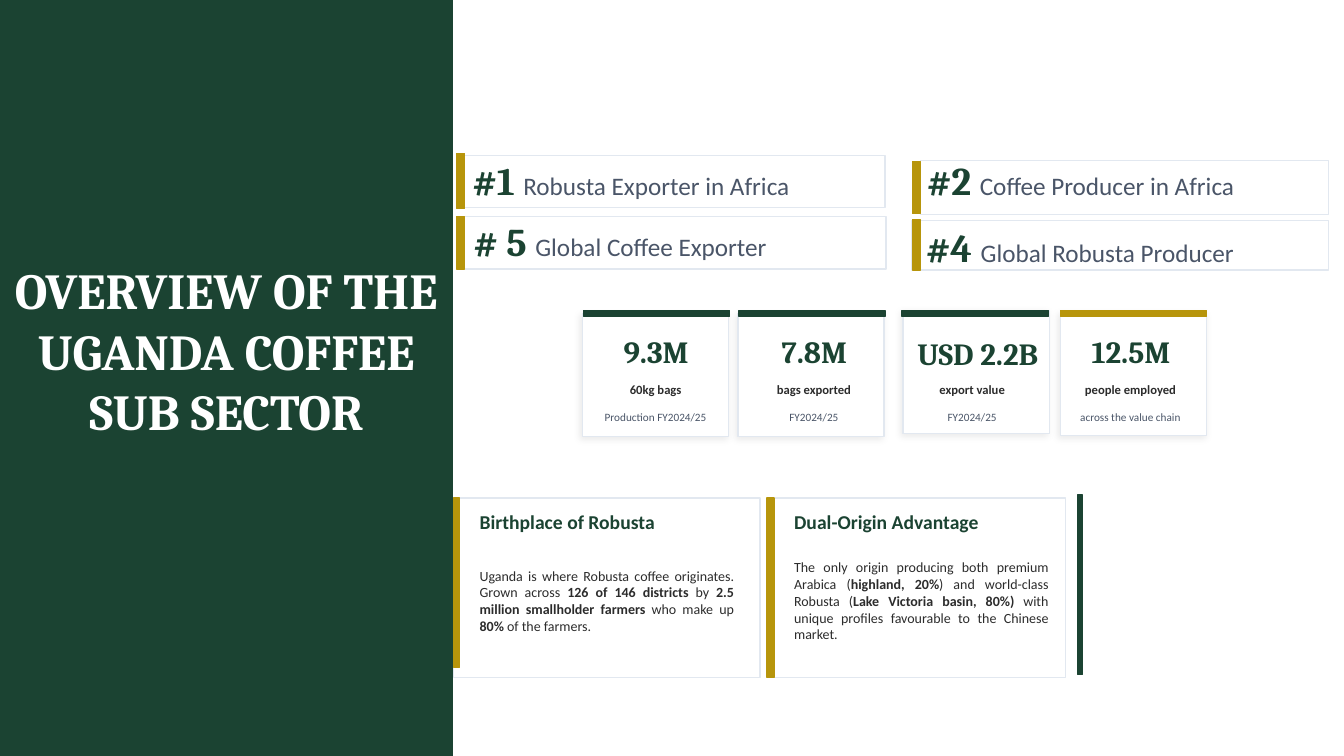
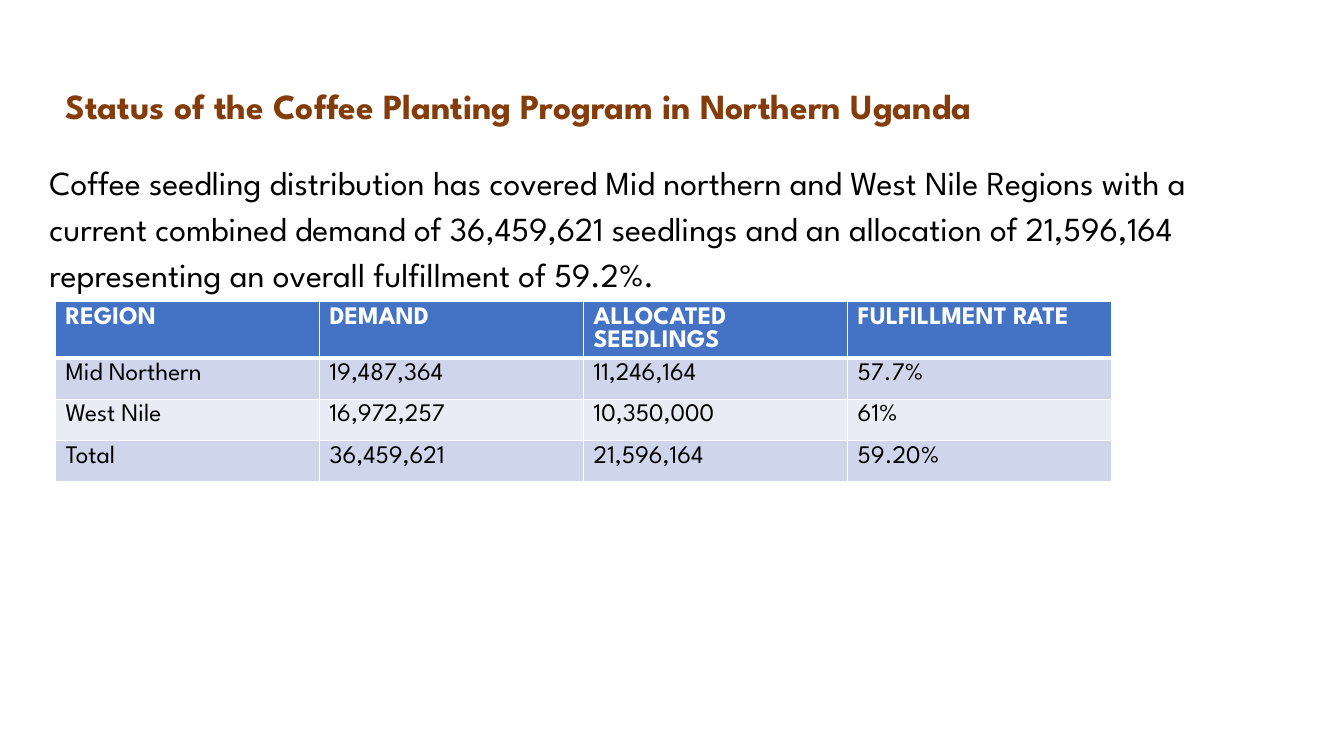
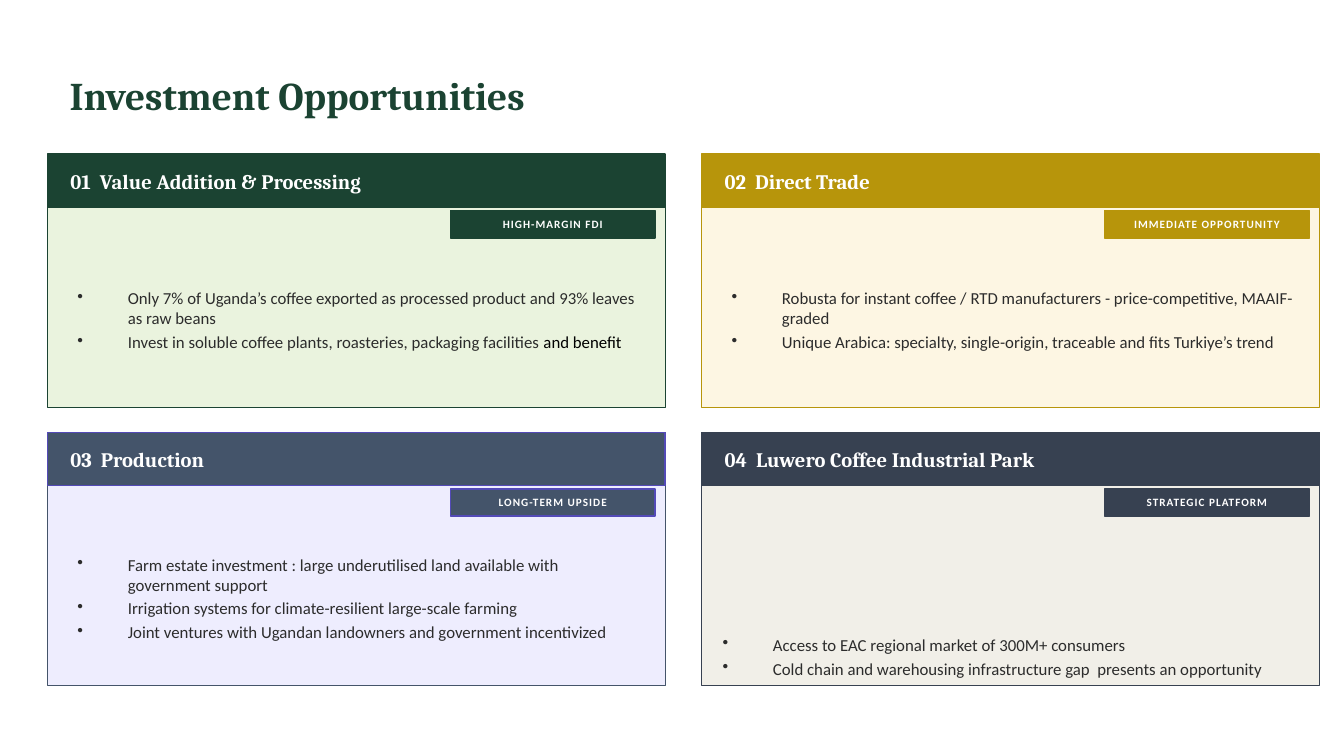
from itertools import cycle

from lxml import etree
from pptx import Presentation
from pptx import util as u
from pptx.dml.color import RGBColor
from pptx.enum import shapes, text
from pptx.oxml import ns

PX = 9144  # 100 px to the inch

GREEN = RGBColor(0x1B, 0x43, 0x32)
GOLD = RGBColor(0xB7, 0x95, 0x0B)
WHITE = RGBColor(0xFF, 0xFF, 0xFF)
BLACK = RGBColor(0, 0, 0)
INK = RGBColor(0x2C, 0x2C, 0x2C)
GREY = RGBColor(0x4A, 0x55, 0x68)
RULE = RGBColor(0xE2, 0xE8, 0xF0)
BROWN = RGBColor(0x84, 0x3C, 0x0B)
BLUE = RGBColor(0x44, 0x72, 0xC4)
BAND_DARK = RGBColor(0xCF, 0xD5, 0xEA)
BAND_LIGHT = RGBColor(0xE9, 0xEB, 0xF5)
SLATE = RGBColor(0x44, 0x54, 0x6A)
VIOLET = RGBColor(0x53, 0x4A, 0xB7)
NAVY = RGBColor(0x37, 0x41, 0x51)
MINT = RGBColor(0xEA, 0xF3, 0xDE)
CREAM = RGBColor(0xFD, 0xF6, 0xE3)
LILAC = RGBColor(0xEE, 0xED, 0xFE)
STONE = RGBColor(0xF1, 0xEF, 0xE8)


def style(name, size, color, bold=False):
    return {"name": name, "size": u.Pt(size), "color": color, "bold": bold}


COVER = style("Cambria", 36, WHITE, True)
HEADING = style("Cambria", 28, GREEN, True)
RANK_TEXT = style("Calibri", 18, GREY)
VALUE = style("Cambria", 22, GREEN, True)
UNIT = style("Calibri", 9, INK, True)
NOTE = style("Calibri", 8, GREY)
STORY_HEAD = style("Calibri", 14, GREEN, True)
STORY = style("Calibri", 10, INK)
STATUS_TITLE = style("League Spartan", 25.2, BROWN, True)
STATUS_BODY = style("League Spartan", 24, BLACK)
TABLE_HEAD = style("League Spartan", 18, WHITE, True)
TABLE_CELL = style("League Spartan", 18, BLACK)
CARD_HEAD = style("Cambria", 14.7, WHITE, True)
TAG = style("Calibri", 8, WHITE, True)
POINT = style("Calibri", 12, INK)

LEFT, CENTER, JUSTIFY = (text.PP_ALIGN.LEFT, text.PP_ALIGN.CENTER,
                         text.PP_ALIGN.JUSTIFY)
TOP, MIDDLE, BOTTOM = (text.MSO_ANCHOR.TOP, text.MSO_ANCHOR.MIDDLE,
                       text.MSO_ANCHOR.BOTTOM)

OVERVIEW_TITLE = "OVERVIEW OF THE UGANDA COFFEE SUB SECTOR"
# rank, wording, frame, text box, bar
RANKS = [
    ("#1 ", "Robusta Exporter in Africa",
     (459, 154, 419, 52), (459, 153, 455, 50), (453, 152, 8, 55)),
    ("#2 ", "Coffee Producer in Africa",
     (913, 159, 405, 54), (910, 156, 410, 44), (905, 160, 8, 52)),
    ("# 5 ", "Global Coffee Exporter",
     (460, 215, 419, 52), (460, 214, 455, 50), (453, 215, 8, 52)),
    ("#4 ", "Global Robusta Producer",
     (905, 219, 413, 49), (909, 220, 455, 50), (905, 218, 8, 50)),
]
# value, unit, note, card corner, bar x, bar colour, value box, label x
FIGURES = [
    ("9.3M", "60kg bags", "Production FY2024/25",
     (578, 311), 579, GREEN, (586, 320, 130, 52), 584),
    ("7.8M", "bags exported", "FY2024/25",
     (732, 311), 733, GREEN, (743, 320, 130, 52), 741),
    ("USD 2.2B", "export value", "FY2024/25",
     (896, 308), 895, GREEN, (896, 320, 148, 54), 898),
    ("12.5M", "people employed", "across the value chain",
     (1052, 310), 1052, GOLD, (1057, 320, 130, 52), 1055),
]
# heading, alternating plain and bold wording, frame, bar, text x
STORIES = [
    ("Birthplace of Robusta",
     ["Uganda is where Robusta coffee originates. Grown across ",
      "126 of 146 districts ", "by ", "2.5 million smallholder farmers",
      " who make up ", "80%", " of the farmers."],
     (450, 494, 304, 178), (450, 494, 6, 168), 466),
    ("Dual-Origin Advantage",
     ["The only origin producing both premium Arabica (", "highland, 20%",
      ") and world-class Robusta (", "Lake Victoria basin, 80%) ",
      "with unique profiles favourable to the Chinese market."],
     (762, 494, 295, 178), (761, 494, 7, 178), 778),
]

STATUS_HEADING = "Status of the Coffee Planting Program in Northern Uganda"
STATUS_TEXT = (
    "Coffee seedling distribution has covered Mid northern and West Nile "
    "Regions with a current combined demand of 36,459,621 seedlings and an "
    "allocation of 21,596,164 representing an overall fulfillment of 59.2%.")
REGIONS = [
    ("REGION", "DEMAND", "ALLOCATED SEEDLINGS", "FULFILLMENT RATE"),
    ("Mid Northern", "19,487,364", "11,246,164", "57.7%"),
    ("West Nile", "16,972,257", "10,350,000", "61%"),
    ("Total", "36,459,621", "21,596,164", "59.20%"),
]

# heading, tag, colour, band line, panel, points, shift of the points
OPPORTUNITIES = [
    ("01  Value Addition & Processing", "HIGH-MARGIN FDI", GREEN, GREEN, MINT,
     [[("Only 7% of Uganda’s coffee exported as processed product and 93% "
        "leaves as raw beans", POINT)],
      [("Invest in soluble coffee plants, roasteries, packaging facilities",
        POINT), (" and benefit", {**POINT, "color": BLACK})]], (0, 0)),
    ("02  Direct Trade", "IMMEDIATE OPPORTUNITY", GOLD, GOLD, CREAM,
     [[("Robusta for instant coffee / RTD manufacturers - "
        "price-competitive, MAAIF-graded", POINT)],
      [("Unique Arabica: specialty, single-origin, traceable and fits "
        "Turkiye’s trend", POINT)]], (0, 0)),
    ("03  Production", "LONG-TERM UPSIDE", SLATE, VIOLET, LILAC,
     [[("Farm estate investment : large underutilised land available with "
        "government support", POINT)],
      [("Irrigation systems for climate-resilient large-scale farming",
        POINT)],
      [("Joint ventures with Ugandan landowners and government "
        "incentivized", POINT)]], (0, 0)),
    ("04  Luwero Coffee Industrial Park", "STRATEGIC PLATFORM", NAVY, NAVY,
     STONE,
     [[("Access to EAC regional market of 300M+ consumers", POINT)],
      [("Cold chain and warehousing infrastructure gap  presents an "
        "opportunity", POINT)]], (-9, 58)),
]


def emu(box):
    return [round(v * PX) for v in box]


def sub(parent, tag, **attrs):
    return etree.SubElement(parent, ns.qn(tag), attrs)


def rect(s, box, fill, line=None, width=1):
    sp = s.shapes.add_shape(shapes.MSO_SHAPE.RECTANGLE, *emu(box))
    sp.shadow.inherit = False
    sp.fill.solid()
    sp.fill.fore_color.rgb = fill
    sp.line.color.rgb = line or fill
    sp.line.width = u.Pt(width)
    return sp


def soften(sp):
    """Give a shape a faint shadow towards its lower left."""
    effects = sp._element.spPr.find(ns.qn("a:effectLst"))
    shadow = sub(effects, "a:outerShdw", blurRad=str(u.Pt(5)),
                 dist=str(u.Pt(2)), dir=str(135 * 60000), algn="bl",
                 rotWithShape="0")
    sub(sub(shadow, "a:srgbClr", val="000000"), "a:alpha", val="7000")


def add_runs(p, runs):
    for words, fmt in runs:
        r = p.add_run()
        r.text = words
        for key, value in fmt.items():
            if key == "color":
                r.font.color.rgb = value
            else:
                setattr(r.font, key, value)


def fill_text(sp, paragraphs, align=LEFT, anchor=MIDDLE, **spacing):
    tf = sp.text_frame
    tf.word_wrap = True
    tf.auto_size = text.MSO_AUTO_SIZE.NONE
    tf.vertical_anchor = anchor
    for i, runs in enumerate(paragraphs):
        p = tf.add_paragraph() if i else tf.paragraphs[0]
        p.alignment = align
        for key, value in spacing.items():
            setattr(p, key, value)
        add_runs(p, runs)
    return tf


def label(s, box, runs, **layout):
    return fill_text(s.shapes.add_textbox(*emu(box)), [runs], **layout)


def place(sp, box):
    sp.left, sp.top, sp.width, sp.height = emu(box)


def new_slide(prs, layout, title, box, fmt, **spacing):
    s = prs.slides.add_slide(prs.slide_layouts[layout])
    place(s.shapes.title, box)
    fill_text(s.shapes.title, [[(title, fmt)]], **spacing)
    return s


def overview(prs):
    s = new_slide(prs, 5, OVERVIEW_TITLE, (-9, 200, 467, 295), COVER,
                  align=CENTER)
    panel = rect(s, (0, 0, 449, 750), GREEN)
    s.shapes.title._element.addprevious(panel._element)

    for value, unit, note, corner, bar_x, color, value_box, x in FIGURES:
        soften(rect(s, (*corner, 145, 122), WHITE, RULE))
        rect(s, (bar_x, 308, 145, 6), color)
        label(s, value_box, [(value, VALUE)], align=CENTER, anchor=BOTTOM)
        label(s, (x, 374, 133, 24), [(unit, UNIT)], align=CENTER)
        label(s, (x, 398, 133, 32), [(note, NOTE)], align=CENTER)

    for heading, parts, frame, bar, x in STORIES:
        rect(s, frame, WHITE, RULE)
        rect(s, bar, GOLD)
        label(s, (x, 502, 272, 32), [(heading, STORY_HEAD)])
        runs = [(words, {**STORY, "bold": bold})
                for words, bold in zip(parts, cycle((False, True)))]
        label(s, (x, 536, 272, 120), runs, align=JUSTIFY)
    rect(s, (1069, 491, 5, 178), GREEN)

    for rank, words, frame, box, bar in RANKS:
        rect(s, frame, WHITE, RULE)
        label(s, box, [(rank, HEADING), (words, RANK_TEXT)])
        rect(s, bar, GOLD)


def set_borders(cell, bottom):
    """Draw white cell borders; they must come before the fill."""
    pr = cell._tc.get_or_add_tcPr()
    for side, width in zip("LRTB", (1, 1, 1, bottom)):
        ln = sub(pr, "a:ln" + side, w=str(u.Pt(width)))
        sub(sub(ln, "a:solidFill"), "a:srgbClr", val=str(WHITE))


def status(prs):
    s = new_slide(prs, 1, STATUS_HEADING, (55, 66, 1170, 82), STATUS_TITLE,
                  line_spacing=0.9)
    body = s.placeholders[1]
    place(body, (39, 150, 1177, 391))
    pPr = body.text_frame.paragraphs[0]._p.get_or_add_pPr()
    pPr.set("marL", "0")
    pPr.set("indent", "0")
    sub(pPr, "a:buNone")
    fill_text(body, [[(STATUS_TEXT, STATUS_BODY)]], anchor=TOP,
              line_spacing=1.14, space_before=u.Pt(0), space_after=u.Pt(6))

    table = s.shapes.add_table(len(REGIONS), len(REGIONS[0]),
                               *emu((55, 299, 1048, 164))).table
    for i, row in enumerate(REGIONS):
        for j, words in enumerate(row):
            cell = table.cell(i, j)
            set_borders(cell, 1 if i else 3)
            cell.fill.solid()
            cell.fill.fore_color.rgb = (
                BLUE if i == 0 else BAND_DARK if i % 2 else BAND_LIGHT)
            add_runs(cell.text_frame.paragraphs[0],
                     [(words, TABLE_CELL if i else TABLE_HEAD)])


def opportunities(prs):
    s = new_slide(prs, 5, "Investment Opportunities", (59, 70, 846, 48),
                  HEADING)
    for i, (heading, tag, color, line, panel, points,
            (dx, dy)) in enumerate(OPPORTUNITIES):
        x, y = 47 + i % 2 * 649, 153 + i // 2 * 276
        rect(s, (x, y, 613, 251), panel, color, 0.75)
        rect(s, (x, y, 613, 53), color, line)
        label(s, (x + 13, y, 593, 53), [(heading, CARD_HEAD)])
        tag_box = (x + 400, y + 56, 203, 27)
        rect(s, tag_box, color, line)
        tf = label(s, tag_box, [(tag, TAG)], align=CENTER)
        tf.paragraphs[0].runs[0]._r.get_or_add_rPr().set("spc", "70")
        box = s.shapes.add_textbox(*emu((x + 20 + dx, y + 86 + dy, 580, 157)))
        tf = fill_text(box, points, space_after=u.Pt(2.6))
        for p in tf.paragraphs:
            pPr = p._p.get_or_add_pPr()
            pPr.set("marL", str(50 * PX))
            pPr.set("indent", str(-50 * PX))
            sub(pPr, "a:buChar", char="•")


def main():
    prs = Presentation()
    prs.slide_width, prs.slide_height = emu((1333.33, 750))
    overview(prs)
    status(prs)
    opportunities(prs)
    prs.save("out.pptx")


if __name__ == "__main__":
    main()
